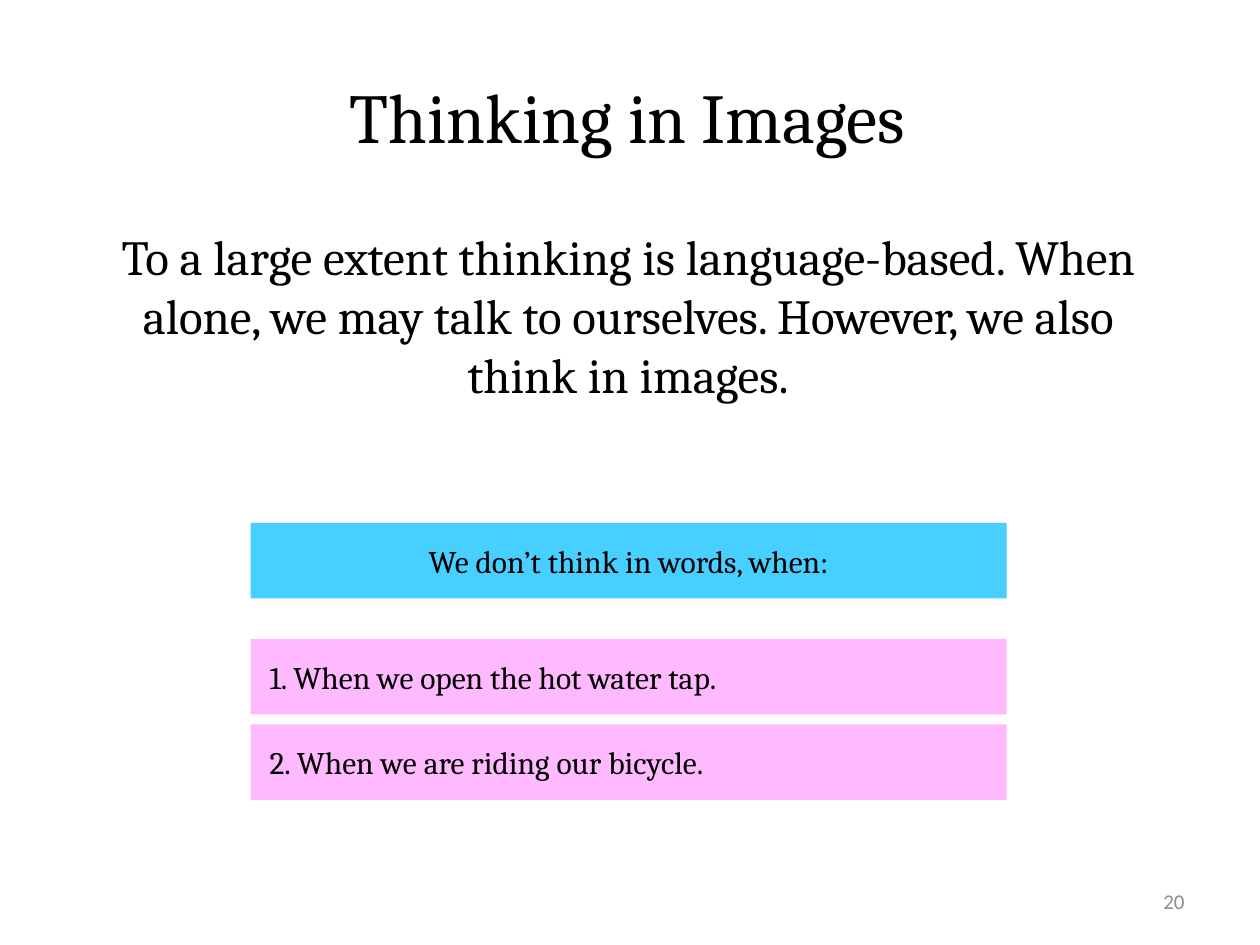
from lxml import etree
from pptx import Presentation
from pptx.dml.color import RGBColor
from pptx.enum.shapes import MSO_SHAPE
from pptx.enum.text import MSO_ANCHOR, PP_ALIGN
from pptx.oxml.ns import qn
from pptx.util import Inches, Pt

RECTANGLE = MSO_SHAPE.RECTANGLE
MIDDLE, TOP = MSO_ANCHOR.MIDDLE, MSO_ANCHOR.TOP
LEFT, CENTER, RIGHT = PP_ALIGN.LEFT, PP_ALIGN.CENTER, PP_ALIGN.RIGHT
BLACK, GREY, BLUE, PINK = "000000", "8C8C8C", "47CFFF", "FFB9FF"


def color(hex_string):
    """Return the colour for a hex string."""
    return RGBColor.from_string(hex_string)


def write(shape, text, size, align, anchor=MIDDLE, font="Cambria", ink=BLACK):
    """Write one formatted paragraph into a shape and return it."""
    frame = shape.text_frame
    frame.text = text
    frame.word_wrap = True
    frame.vertical_anchor = anchor
    paragraph = frame.paragraphs[0]
    paragraph.alignment = align
    for run in paragraph.runs:
        run.font.name = font
        run.font.size = Pt(size)
        run.font.color.rgb = color(ink)
    return paragraph


def place(shape, left, top, width, height):
    """Move and size a shape."""
    shape.left, shape.top = left, top
    shape.width, shape.height = width, height


def fill_title(slide, box, text):
    """Fill the title placeholder."""
    place(slide.shapes.title, *box)
    write(slide.shapes.title, text, 40, CENTER)


def fill_body(slide, box, text):
    """Fill the body placeholder with one centred, unbulleted paragraph."""
    body = slide.placeholders[1]
    place(body, *box)
    paragraph = write(body, text, 28, CENTER, TOP)
    properties = paragraph._p.get_or_add_pPr()
    properties.set("marL", "0")
    properties.set("indent", "0")
    etree.SubElement(properties, qn("a:buNone"))


def add_bar(slide, box, text, fill, align):
    """Add a filled bar with a line of text."""
    bar = slide.shapes.add_shape(RECTANGLE, *box)
    bar.shadow.inherit = False
    bar.fill.solid()
    bar.fill.fore_color.rgb = color(fill)
    bar.line.fill.background()
    bar.text_frame.margin_left = bar.text_frame.margin_right = Inches(0.15)
    paragraph = write(bar, text, 18, align)
    paragraph.space_before = Pt(3.6)


def add_examples(slide, left, top, width, heading, examples):
    """Add the heading bar and the numbered example bars below it."""
    height, first_offset, pitch = Inches(0.6), Inches(0.92), Inches(0.68)
    add_bar(slide, (left, top, width, height), heading, BLUE, CENTER)
    for index, example in enumerate(examples):
        box = (left, top + first_offset + index * pitch, width, height)
        add_bar(slide, box, f"{index + 1}. {example}", PINK, LEFT)


def add_page_number(slide, box, number):
    """Add the page number in the footer."""
    write(slide.shapes.add_textbox(*box), number, 12, RIGHT, font="Calibri", ink=GREY)


def main():
    """Build and save the presentation."""
    presentation = Presentation()
    presentation.slide_width, presentation.slide_height = Inches(10), Inches(7.5)
    slide = presentation.slides.add_slide(presentation.slide_layouts[1])
    fill_title(slide, (Inches(0.73), Inches(0.29), Inches(8.5), Inches(1.25)),
               "Thinking in Images")
    fill_body(slide, (Inches(0.63), Inches(1.75), Inches(8.71), Inches(1.67)),
              "To a large extent thinking is language-based. When alone, we may "
              "talk to ourselves. However, we also think in images.")
    add_examples(slide, Inches(1.99), Inches(4.15), Inches(6),
                 "We don’t think in words, when:",
                 ["When we open the hot water tap.", "When we are riding our bicycle."])
    add_page_number(slide, (Inches(7.17), Inches(6.95), Inches(2.33), Inches(0.4)), "20")
    presentation.save("out.pptx")


if __name__ == "__main__":
    main()
